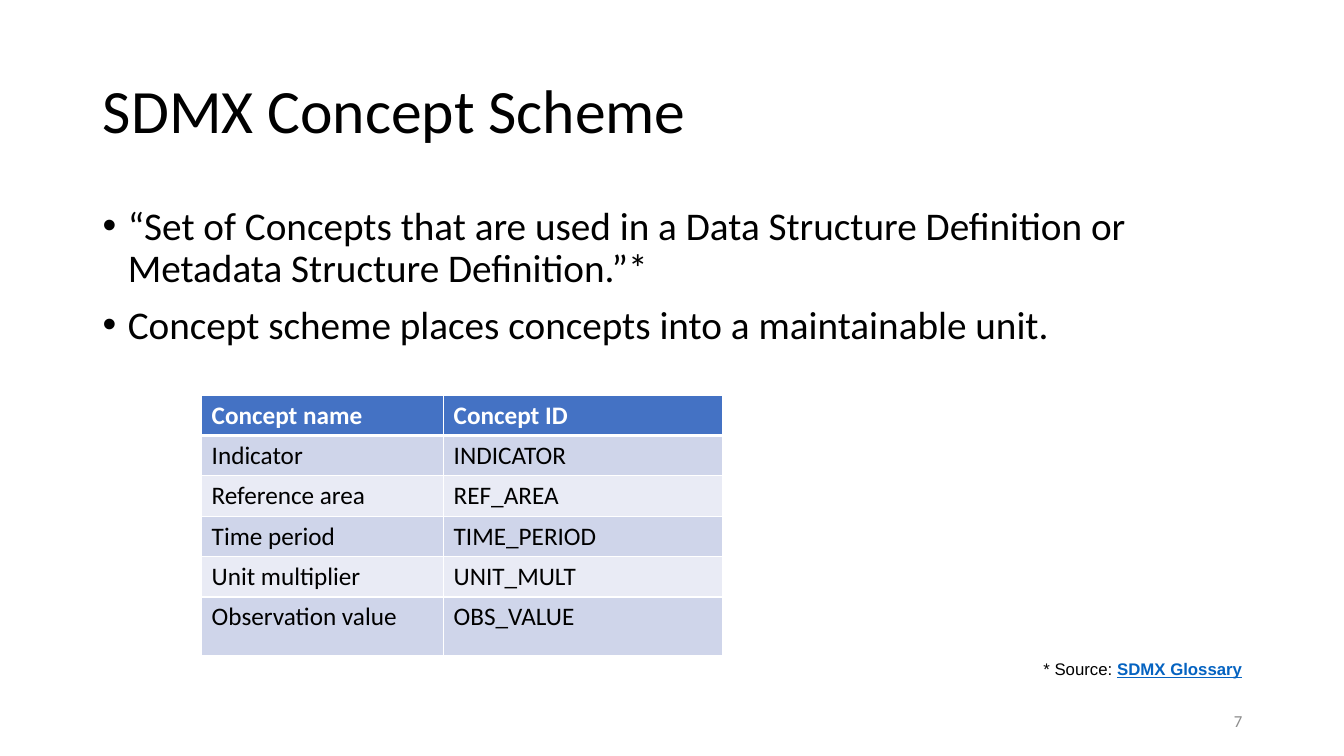
from lxml import etree
from pptx import Presentation
from pptx.dml.color import RGBColor
from pptx.enum.text import MSO_ANCHOR, PP_ALIGN
from pptx.oxml.ns import qn
from pptx.util import Emu, Pt

LEFT, RIGHT = PP_ALIGN.LEFT, PP_ALIGN.RIGHT
TOP, MIDDLE = MSO_ANCHOR.TOP, MSO_ANCHOR.MIDDLE
TITLE_ONLY = 5
EMU_PER_PX = 9144

BLACK, WHITE, GRAY, LINK = "000000", "FFFFFF", "8C8C8C", "0563C1"
HEADER, BANDS = "4472C4", ("CFD5EA", "E9EBF5")

BULLETS = [
    "“Set of Concepts that are used in a Data Structure Definition or Metadata Structure Definition.”*",
    "Concept scheme places concepts into a maintainable unit.",
]
CONCEPTS = [
    ("Concept name", "Concept ID"),
    ("Indicator", "INDICATOR"),
    ("Reference area", "REF_AREA"),
    ("Time period", "TIME_PERIOD"),
    ("Unit multiplier", "UNIT_MULT"),
    ("Observation value", "OBS_VALUE"),
]
COL_WIDTHS = (240, 277)
ROW_HEIGHTS = (37, 37, 37, 37, 37, 58)


def px(n):
    return Emu(n * EMU_PER_PX)


def rgb(color):
    return RGBColor.from_string(color)


def format_run(r, size, color=BLACK, font="Calibri", bold=False):
    r.font.size = Pt(size)
    r.font.name = font
    r.font.bold = bold
    r.font.color.rgb = rgb(color)


def format_paragraph(p, size, color=BLACK, align=LEFT, bold=False):
    p.alignment = align
    for r in p.runs:
        format_run(r, size, color, bold=bold)


def add_title(s, text, x, y, w, h):
    sp = s.shapes.title
    sp.left, sp.top, sp.width, sp.height = px(x), px(y), px(w), px(h)
    tf = sp.text_frame
    tf.text = text
    tf.vertical_anchor = MIDDLE
    p = tf.paragraphs[0]
    p.line_spacing = 0.9
    format_paragraph(p, 44)


def add_textbox(s, x, y, w, h, anchor=TOP):
    tf = s.shapes.add_textbox(px(x), px(y), px(w), px(h)).text_frame
    tf.word_wrap = True
    tf.vertical_anchor = anchor
    return tf


def add_bullet(p, indent):
    pPr = p._p.get_or_add_pPr()
    pPr.set("marL", str(px(indent)))
    pPr.set("indent", str(-px(indent)))
    etree.SubElement(pPr, qn("a:buFont"), typeface="Arial")
    etree.SubElement(pPr, qn("a:buChar"), char="•")


def add_bullets(s, items, x, y, w, h):
    tf = add_textbox(s, x, y, w, h)
    tf.text = "\n".join(items)
    for p in tf.paragraphs:
        p.line_spacing = 0.9
        p.space_before = Pt(10)
        add_bullet(p, 25)
        format_paragraph(p, 28)


def set_border(cell, side, width):
    ln = etree.SubElement(cell._tc.get_or_add_tcPr(), qn(f"a:ln{side}"), w=str(Pt(width)))
    fill = etree.SubElement(ln, qn("a:solidFill"))
    etree.SubElement(fill, qn("a:srgbClr"), val=WHITE)


def format_cell(cell, text, row):
    header = row == 0
    widths = {"L": 1, "R": 1, "T": 3 if row == 1 else 1, "B": 3 if header else 1}
    for side, width in widths.items():
        set_border(cell, side, width)
    cell.fill.solid()
    cell.fill.fore_color.rgb = rgb(HEADER if header else BANDS[(row - 1) % 2])
    cell.text = text
    format_paragraph(cell.text_frame.paragraphs[0], 18, WHITE if header else BLACK, bold=header)


def add_concept_table(s, x, y):
    frame = s.shapes.add_table(len(CONCEPTS), len(COL_WIDTHS), px(x), px(y),
                               px(sum(COL_WIDTHS)), px(sum(ROW_HEIGHTS)))
    table = frame.table
    for col, width in zip(table.columns, COL_WIDTHS):
        col.width = px(width)
    for row, height in zip(table.rows, ROW_HEIGHTS):
        row.height = px(height)
    for i, values in enumerate(CONCEPTS):
        for j, text in enumerate(values):
            format_cell(table.cell(i, j), text, i)


def add_source(s, label, name, x, y, w, h):
    p = add_textbox(s, x, y, w, h).paragraphs[0]
    r = p.add_run()
    r.text = label
    format_run(r, 12, font="Arial")
    r = p.add_run()
    r.text = name
    format_run(r, 12, LINK, "Arial", True)
    r.font.underline = True


def add_page_number(s, text, x, y, w, h):
    tf = add_textbox(s, x, y, w, h, MIDDLE)
    tf.text = text
    format_paragraph(tf.paragraphs[0], 12, GRAY, RIGHT)


def main():
    prs = Presentation()
    prs.slide_width, prs.slide_height = px(1333), px(750)
    s = prs.slides.add_slide(prs.slide_layouts[TITLE_ONLY])
    add_title(s, "SDMX Concept Scheme", 92, 40, 1150, 145)
    add_bullets(s, BULLETS, 92, 200, 1150, 476)
    add_page_number(s, "7", 942, 695, 300, 40)
    add_concept_table(s, 200, 392)
    add_source(s, "* Source: ", "SDMX Glossary", 1025, 649, 230, 30)
    prs.save("out.pptx")


if __name__ == "__main__":
    main()
